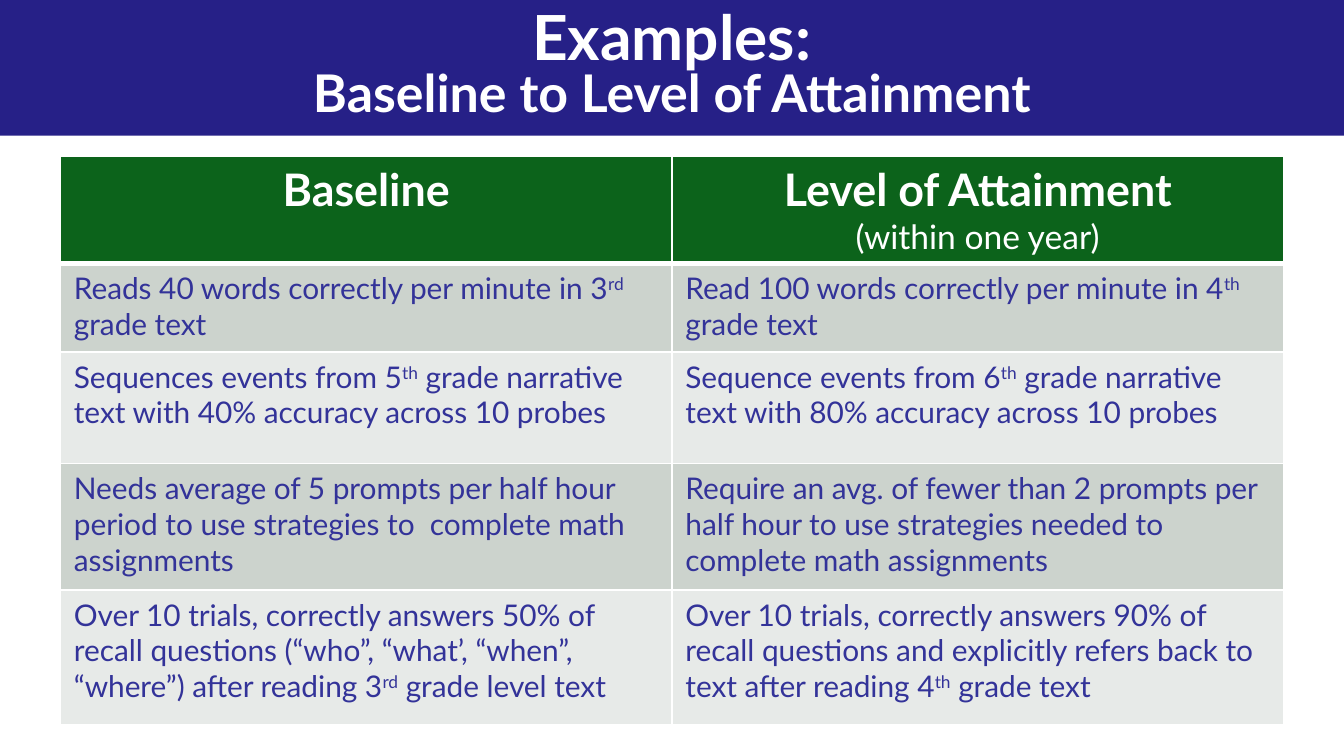
from dataclasses import dataclass

from lxml import etree
from pptx import Presentation
from pptx.dml.color import RGBColor
from pptx.enum.shapes import MSO_SHAPE
from pptx.enum.text import MSO_ANCHOR, PP_ALIGN
from pptx.oxml.ns import qn
from pptx.util import Inches, Pt

RECTANGLE = MSO_SHAPE.RECTANGLE
MIDDLE = MSO_ANCHOR.MIDDLE
CENTER, LEFT = PP_ALIGN.CENTER, PP_ALIGN.LEFT


@dataclass(frozen=True)
class Theme:
    """Colours, typeface and type sizes of the slide."""
    font: str = "Lato"
    white: str = "FFFFFF"
    banner: str = "262087"
    header: str = "0C631B"
    body: str = "333399"
    bands: tuple = ("CCD3CD", "E7EAE8")
    title_size: float = 33.3
    subtitle_size: float = 27.8
    heading_size: float = 24
    note_size: float = 18
    body_size: float = 16


THEME = Theme()
SLIDE_WIDTH = Inches(10)
SLIDE_HEIGHT = SLIDE_WIDTH * 9 // 16
BANNER_HEIGHT = Inches(1.01)
ROW_HEIGHTS = (0.79, 0.66, 0.83, 0.94, 1)
COLUMN_WIDTH = 4.55
HEADINGS = (
    [("Baseline", THEME.heading_size, True)],
    [("Level of Attainment", THEME.heading_size, True),
     ("(within one year)", THEME.note_size, False)],
)
EXAMPLES = (
    ("Reads 40 words correctly per minute in 3^rd^ grade text",
     "Read 100 words correctly per minute in 4^th^ grade text"),
    ("Sequences events from 5^th^ grade narrative text with 40% accuracy across 10 probes",
     "Sequence events from 6^th^ grade narrative text with 80% accuracy across 10 probes"),
    ("Needs average of 5 prompts per half hour period to use strategies to  complete math assignments",
     "Require an avg. of fewer than 2 prompts per half hour to use strategies needed to "
     "complete math assignments"),
    ("Over 10 trials, correctly answers 50% of recall questions (“who”, “what’, “when”, “where”) "
     "after reading 3^rd^ grade level text",
     "Over 10 trials, correctly answers 90% of recall questions and explicitly refers back to "
     "text after reading 4^th^ grade text"),
)


def write_lines(frame, lines, color, align, spacing=None):
    """Write (text, size, bold) lines, raising the parts between carets."""
    for index, (text, size, bold) in enumerate(lines):
        para = frame.add_paragraph() if index else frame.paragraphs[0]
        para.alignment = align
        para.line_spacing = spacing
        font = para.font
        font.name, font.size, font.bold = THEME.font, Pt(size), bold
        font.color.rgb = RGBColor.from_string(color)
        for position, part in enumerate(text.split("^")):
            span = para.add_run()
            span.text = part
            if position % 2:
                span.font._element.set("baseline", "30000")


def add_banner(page):
    """Add the title band across the top of the page."""
    band = page.shapes.add_shape(RECTANGLE, Inches(-0.01), 0, Inches(10.01), BANNER_HEIGHT)
    band.shadow.inherit = False
    band.fill.solid()
    band.fill.fore_color.rgb = RGBColor.from_string(THEME.banner)
    band.line.fill.background()
    box = page.shapes.add_textbox(0, 0, SLIDE_WIDTH, BANNER_HEIGHT)
    frame = box.text_frame
    frame.word_wrap = True
    frame.vertical_anchor = MIDDLE
    write_lines(frame, [("Examples:", THEME.title_size, True),
                        ("Baseline to Level of Attainment", THEME.subtitle_size, True)],
                THEME.white, CENTER, 0.8)


def style_cell(cell, fill, top, bottom):
    """Give a cell its fill and white borders, with top and bottom widths in points."""
    properties = cell._tc.get_or_add_tcPr()
    for side, width in (("L", 1), ("R", 1), ("T", top), ("B", bottom)):
        line = etree.SubElement(properties, qn(f"a:ln{side}"), w=str(Pt(width)))
        paint = etree.SubElement(line, qn("a:solidFill"))
        etree.SubElement(paint, qn("a:srgbClr"), val=THEME.white)
    cell.fill.solid()
    cell.fill.fore_color.rgb = RGBColor.from_string(fill)


def add_examples_table(page):
    """Add the table that pairs each baseline with its level of attainment."""
    table = page.shapes.add_table(len(ROW_HEIGHTS), len(HEADINGS), Inches(0.45), Inches(1.16),
                                  Inches(COLUMN_WIDTH * len(HEADINGS)),
                                  Inches(sum(ROW_HEIGHTS))).table
    for row, height in zip(table.rows, ROW_HEIGHTS):
        row.height = Inches(height)
    for cell, lines in zip(table.rows[0].cells, HEADINGS):
        style_cell(cell, THEME.header, 1, 3)
        write_lines(cell.text_frame, lines, THEME.white, CENTER)
    for index, texts in enumerate(EXAMPLES):
        for cell, text in zip(table.rows[index + 1].cells, texts):
            style_cell(cell, THEME.bands[index % 2], 1 if index else 3, 1)
            write_lines(cell.text_frame, [(text, THEME.body_size, False)], THEME.body, LEFT)


def main():
    """Build the slide and save it."""
    deck = Presentation()
    deck.slide_width, deck.slide_height = SLIDE_WIDTH, SLIDE_HEIGHT
    page = deck.slides.add_slide(deck.slide_layouts[6])
    add_banner(page)
    add_examples_table(page)
    deck.save("out.pptx")


if __name__ == "__main__":
    main()
